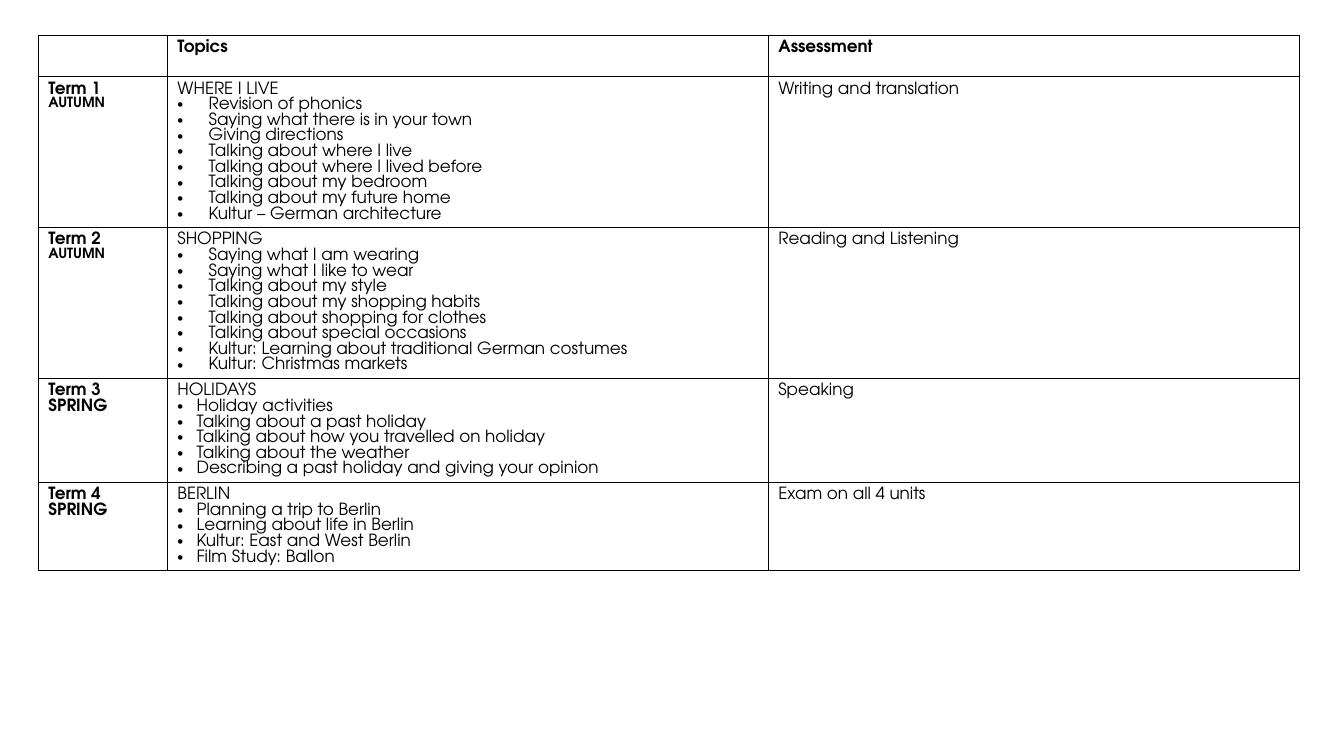
from lxml import etree
from pptx import Presentation
from pptx.dml.color import RGBColor
from pptx.oxml.ns import qn
from pptx.util import Inches, Pt

HEADINGS = ("", "Topics", "Assessment")
# term, season, season size, bullet indent, unit, topics, assessment
TERMS = [
    ("Term 1", "AUTUMN", 10, 0.31, "WHERE I LIVE", [
        "Revision of phonics",
        "Saying what there is in your town",
        "Giving directions",
        "Talking about where I live",
        "Talking about where I lived before",
        "Talking about my bedroom",
        "Talking about my future home",
        "Kultur – German architecture",
    ], "Writing and translation"),
    ("Term 2", "AUTUMN", 10, 0.31, "SHOPPING", [
        "Saying what I am wearing",
        "Saying what I like to wear",
        "Talking about my style",
        "Talking about my shopping habits",
        "Talking about shopping for clothes",
        "Talking about special occasions",
        "Kultur: Learning about traditional German costumes",
        "Kultur: Christmas markets",
    ], "Reading and Listening"),
    ("Term 3", "SPRING", 12, 0.19, "HOLIDAYS", [
        "Holiday activities",
        "Talking about a past holiday",
        "Talking about how you travelled on holiday",
        "Talking about the weather",
        "Describing a past holiday and giving your opinion",
    ], "Speaking"),
    ("Term 4", "SPRING", 12, 0.19, "BERLIN", [
        "Planning a trip to Berlin",
        "Learning about life in Berlin",
        "Kultur: East and West Berlin",
        "Film Study: Ballon",
    ], "Exam on all 4 units"),
]
COLORS = {"ink": "000000", "paper": "FFFFFF"}
FONT = "TeX Gyre Adventor"
BODY_SIZE = 12
COLUMN_WIDTHS = (1.28, 5.96, 5.27)
HEADER_HEIGHT, LINE_HEIGHT, CELL_PADDING = 0.41, 0.155, 0.1
LEFT, TOP = 0.38, 0.35


def draw_borders(cell):
    properties = cell._tc.get_or_add_tcPr()
    for side in ("lnL", "lnR", "lnT", "lnB"):
        line = etree.SubElement(properties, qn(f"a:{side}"), w=str(Pt(1)))
        fill = etree.SubElement(line, qn("a:solidFill"))
        etree.SubElement(fill, qn("a:srgbClr"), val=COLORS["ink"])


def add_bullet(paragraph, indent):
    properties = paragraph._p.get_or_add_pPr()
    properties.set("marL", str(Inches(indent)))
    properties.set("indent", str(-Inches(indent)))
    etree.SubElement(properties, qn("a:buFont"), typeface="Arial")
    etree.SubElement(properties, qn("a:buChar"), char="•")


def fill_cell(cell, lines, bold=False, last_size=BODY_SIZE, indent=None):
    """Write the lines; an indent turns all but the first into bullets."""
    draw_borders(cell)
    cell.fill.solid()
    cell.fill.fore_color.rgb = RGBColor.from_string(COLORS["paper"])
    cell.text_frame.text = "\n".join(lines)
    paragraphs = cell.text_frame.paragraphs
    for number, paragraph in enumerate(paragraphs):
        if indent and number:
            add_bullet(paragraph, indent)
        is_last = number == len(paragraphs) - 1
        for font in [paragraph.font] + [run.font for run in paragraph.runs]:
            font.name = FONT
            font.size = Pt(last_size if is_last else BODY_SIZE)
            font.bold = bold
            font.color.rgb = RGBColor.from_string(COLORS["ink"])


def main():
    deck = Presentation()
    deck.slide_width, deck.slide_height = Inches(13.33), Inches(7.5)
    slide = deck.slides.add_slide(deck.slide_layouts[6])

    heights = [HEADER_HEIGHT] + [
        (1 + len(topics)) * LINE_HEIGHT + CELL_PADDING
        for *_, topics, _ in TERMS]
    plan = slide.shapes.add_table(
        len(heights), len(COLUMN_WIDTHS), Inches(LEFT), Inches(TOP),
        Inches(sum(COLUMN_WIDTHS)), Inches(sum(heights))).table
    plan.first_row = plan.horz_banding = False
    for column, width in zip(plan.columns, COLUMN_WIDTHS):
        column.width = Inches(width)
    for row, height in zip(plan.rows, heights):
        row.height = Inches(height)

    for column, heading in enumerate(HEADINGS):
        fill_cell(plan.cell(0, column), [heading], bold=True)
    for row, (term, season, season_size, indent, unit, topics,
              assessment) in enumerate(TERMS, start=1):
        fill_cell(plan.cell(row, 0), [term, season], bold=True,
                  last_size=season_size)
        fill_cell(plan.cell(row, 1), [unit, *topics], indent=indent)
        fill_cell(plan.cell(row, 2), [assessment])

    deck.save("out.pptx")


if __name__ == "__main__":
    main()
